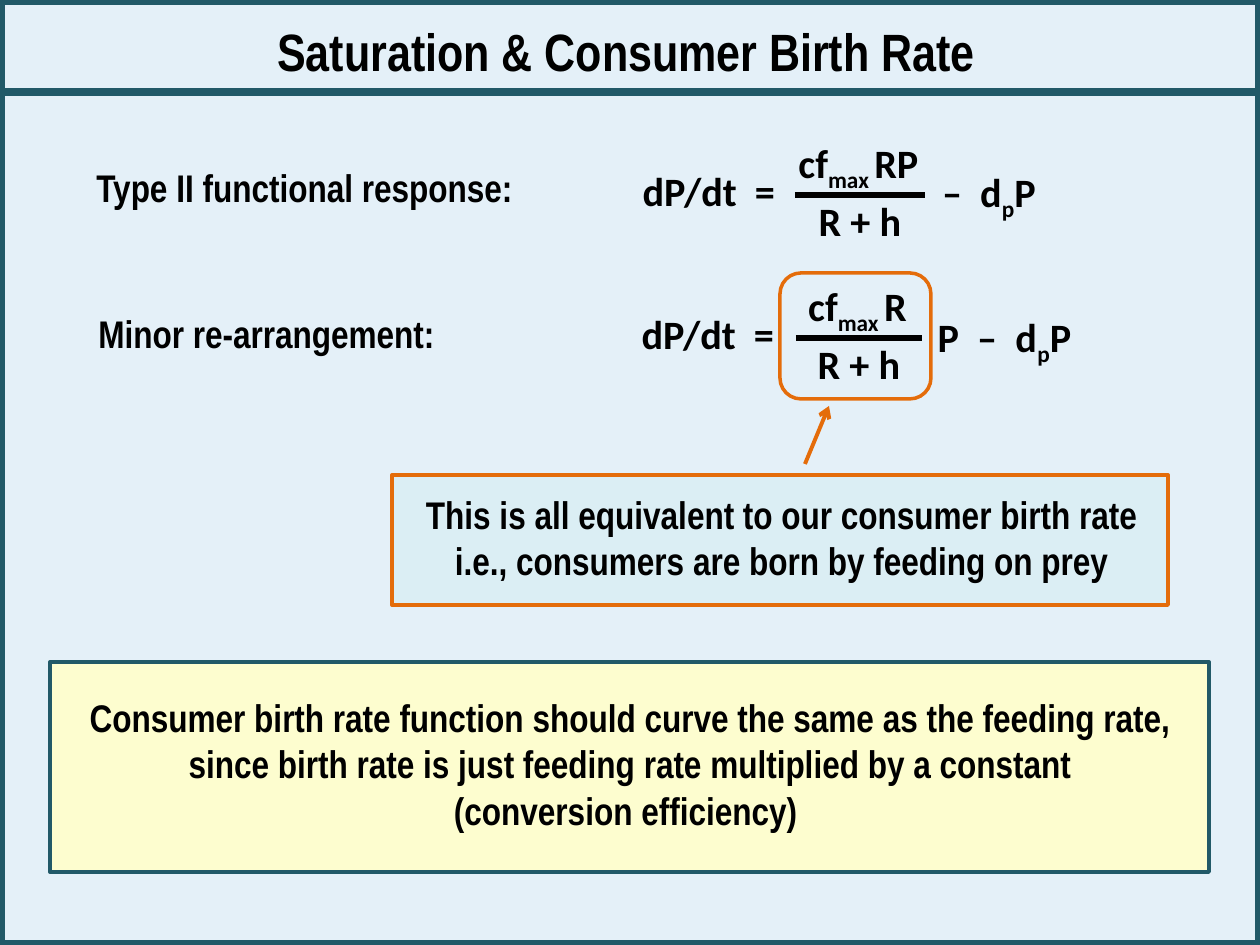
from lxml.etree import SubElement
from pptx import Presentation
from pptx.dml.color import RGBColor
from pptx.enum.shapes import MSO_CONNECTOR, MSO_SHAPE
from pptx.enum.text import MSO_AUTO_SIZE, PP_ALIGN
from pptx.oxml.ns import qn
from pptx.util import Pt

EMU_PER_PX = 914400 / 126
COLORS = {
    "background": "E4F0F8",
    "teal": "215968",
    "orange": "E46C0A",
    "yellow": "FDFDCF",
    "aqua": "DBEEF4",
    "black": "000000",
}
TITLE = {"name": "Arial Narrow", "size": Pt(30), "bold": True}
BODY = {"name": "Arial Narrow", "size": Pt(22), "bold": True}
FORMULA = {"name": "Calibri", "size": Pt(23), "bold": True}


def px(*lengths):
    """Turn pixel lengths into EMU."""
    return [round(length * EMU_PER_PX) for length in lengths]


def color(name):
    """Look up a named colour."""
    return RGBColor.from_string(COLORS[name])


def add_box(shapes, bounds, line, width, fill=None, kind=MSO_SHAPE.RECTANGLE):
    """Add an outlined preset shape."""
    shape = shapes.add_shape(kind, *px(*bounds))
    shape.shadow.inherit = False
    if fill:
        shape.fill.solid()
        shape.fill.fore_color.rgb = color(fill)
    else:
        shape.fill.background()
    shape.line.color.rgb = color(line)
    shape.line.width = Pt(width)


def add_line(shapes, ends, line, width, arrow=False):
    """Add a straight line, with an arrowhead at its end if asked."""
    connector = shapes.add_connector(MSO_CONNECTOR.STRAIGHT, *px(*ends))
    connector.line.color.rgb = color(line)
    connector.line.width = Pt(width)
    if arrow:
        SubElement(connector.line._get_or_add_ln(), qn("a:tailEnd"), type="arrow")
    SubElement(connector._element.spPr, qn("a:effectLst"))


def add_text(shapes, bounds, lines, style, align=PP_ALIGN.CENTER):
    """Add a text box; every second part of a line is a subscript."""
    frame = shapes.add_textbox(*px(*bounds)).text_frame
    frame.word_wrap = True
    frame.auto_size = MSO_AUTO_SIZE.SHAPE_TO_FIT_TEXT
    for index, parts in enumerate(lines):
        paragraph = frame.add_paragraph() if index else frame.paragraphs[0]
        paragraph.alignment = align
        for position, text in enumerate(parts):
            run = paragraph.add_run()
            run.text = text
            for name, value in style.items():
                setattr(run.font, name, value)
            run.font.color.rgb = color("black")
            if position % 2:
                run._r.get_or_add_rPr().set("baseline", "-25000")


def add_equation(shapes, left, top, numerator, bar, rest, rest_bounds):
    """Add a grouped growth equation with a stacked fraction."""
    group = shapes.add_group_shape().shapes
    pieces = [
        ((left + 145, top, 203, 62), numerator),
        ((left + 169, top + 58, 158, 62), ["R + h"]),
        ((left, top + 28, 194, 62), ["dP/dt  ="]),
        (rest_bounds, rest),
    ]
    for bounds, parts in pieces:
        add_text(group, bounds, [parts], FORMULA)
    start, end = bar
    add_line(group, (start, top + 63, end, top + 63), "black", 3)


def main():
    """Build and save the slide."""
    presentation = Presentation()
    presentation.slide_width, presentation.slide_height = px(1260, 945)
    slide = presentation.slides.add_slide(presentation.slide_layouts[6])
    slide.background.fill.solid()
    slide.background.fill.fore_color.rgb = color("background")
    shapes = slide.shapes

    add_box(shapes, (0, 0, 1260, 945), "teal", 6)
    add_line(shapes, (1, 92, 1260, 92), "teal", 5)
    add_box(shapes, (50, 662, 1159, 210), "teal", 2.25, "yellow")
    add_box(shapes, (392, 475, 776, 130), "orange", 2.25, "aqua")
    add_text(shapes, (93, 13, 1067, 77), [["Saturation & Consumer Birth Rate"]], TITLE)

    add_equation(shapes, 612, 132, ["cf", "max ", "RP"], (795, 925),
                 ["–  d", "p", "P"], (912, 161, 154, 62))
    add_equation(shapes, 611, 275, ["cf", "max ", "R"], (796, 922),
                 ["P  –  d", "p", "P"], (905, 306, 199, 62))
    for left, top, label in [
        (84, 158, "Type II functional response:"),
        (86, 304, "Minor re-arrangement:"),
    ]:
        add_text(shapes, (left, top, 505, 59), [[label]], BODY, PP_ALIGN.LEFT)

    add_box(shapes, (780, 273, 151, 126), "orange", 2, kind=MSO_SHAPE.ROUNDED_RECTANGLE)
    add_line(shapes, (805, 464, 829, 406), "orange", 2.25, arrow=True)
    add_text(shapes, (393, 485, 777, 106), [
        ["This is all equivalent to our consumer birth rate"],
        ["i.e., consumers are born by feeding on prey"],
    ], BODY)
    add_text(shapes, (63, 688, 1134, 152), [
        ["Consumer birth rate function should curve the same as the feeding rate,"],
        ["since birth rate is just feeding rate multiplied by a constant"],
        ["(conversion efficiency) "],
    ], BODY)
    presentation.save("out.pptx")


if __name__ == "__main__":
    main()
